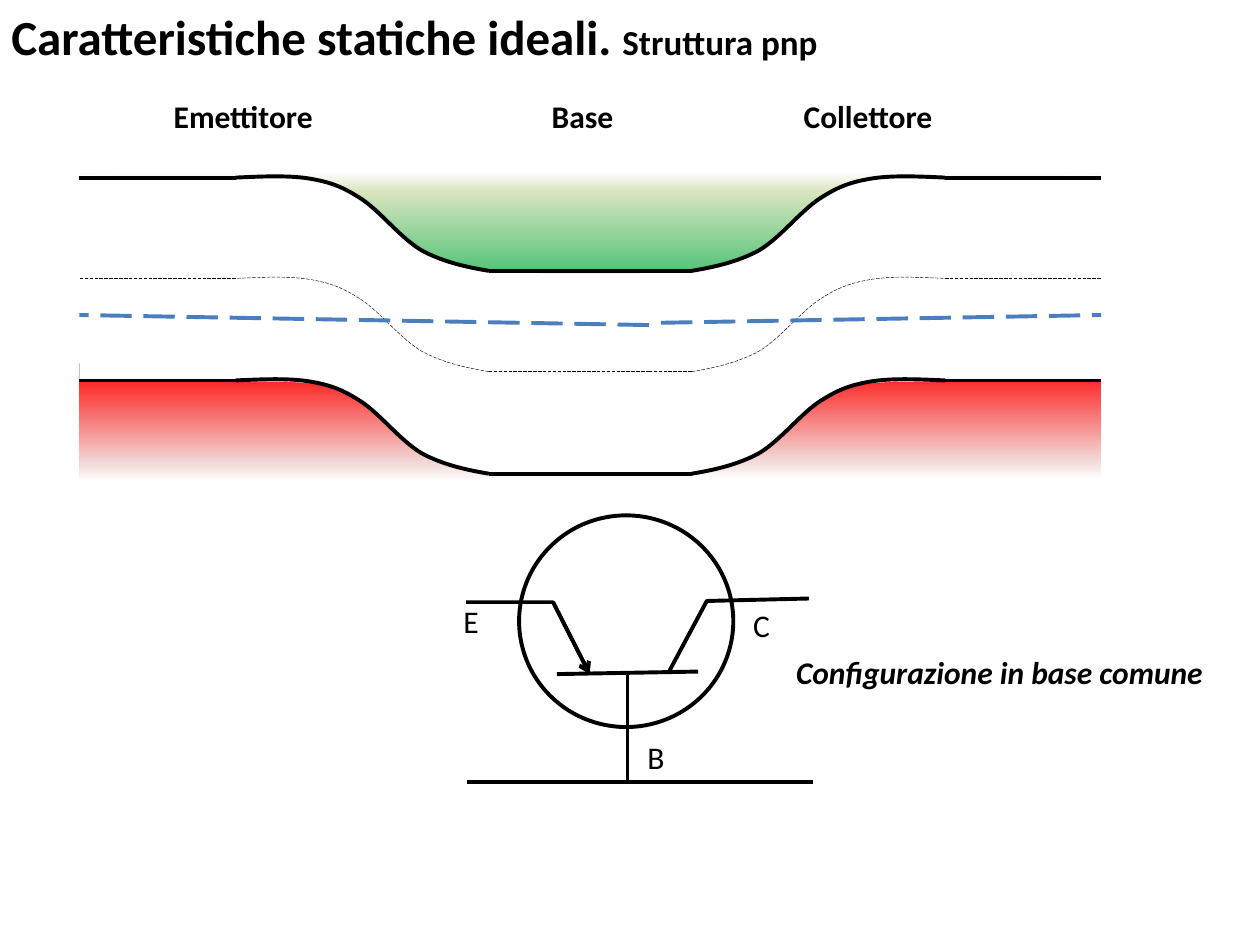
from dataclasses import dataclass

from lxml import etree
from pptx import Presentation
from pptx.dml.color import RGBColor
from pptx.enum import dml, shapes, text
from pptx.oxml import ns, parse_xml
from pptx.util import Inches, Pt


@dataclass(frozen=True)
class Theme:
    font: str = "Calibri"
    ink: str = "000000"
    paper: str = "FFFFFF"
    fermi: str = "4B7EBC"
    electrons: tuple = ("00B050", "D7E4BD")
    holes: tuple = ("FF0000", "F2DCDB")
    title: int = 28
    subtitle: int = 20
    label: int = 18
    thick: float = 2.25
    hair: float = 0.25


T = Theme()
DASH = dml.MSO_LINE.LONG_DASH


def draw(shps, pts, color=T.ink, width=T.thick, dash=None, fill=None):
    """Two points make a connector, more make a freeform; fill closes it."""
    pts = [(Inches(x), Inches(y)) for x, y in pts]
    if len(pts) == 2:
        sp = shps.add_connector(shapes.MSO_CONNECTOR.STRAIGHT, *pts[0], *pts[1])
        etree.SubElement(sp._element.spPr, ns.qn("a:effectLst"))
    else:
        fb = shps.build_freeform(*pts[0])
        fb.add_line_segments(pts[1:], close=fill is not None)
        sp = fb.convert_to_shape()
        sp.shadow.inherit = False
        if fill:
            sp.fill.solid()
            sp.fill.fore_color.rgb = RGBColor.from_string(fill)
            sp.line.fill.background()
            return sp
        sp.fill.background()
    sp.line.color.rgb = RGBColor.from_string(color)
    sp.line.width = Pt(width)
    if dash:
        sp.line.dash_style = dash
    return sp


def style(r, size, bold=False, italic=False):
    r.font.name = T.font
    r.font.size = Pt(size)
    r.font.bold = bold
    r.font.italic = italic
    r.font.color.rgb = RGBColor.from_string(T.ink)


prs = Presentation()
prs.slide_width, prs.slide_height = Inches(10), Inches(7.5)
s = prs.slides.add_slide(prs.slide_layouts[5])

# Title
title = s.shapes.title
title.left, title.top, title.width, title.height = map(Inches, (-0.01, 0, 6.7, 0.57))
tf = title.text_frame
tf.word_wrap = False
tf.vertical_anchor = text.MSO_ANCHOR.TOP
p = tf.paragraphs[0]
p.alignment = text.PP_ALIGN.LEFT
for words, size in (("Caratteristiche statiche ideali. ", T.title), ("Struttura pnp", T.subtitle)):
    r = p.add_run()
    r.text = words
    style(r, size, bold=True)

# Carrier clouds: electrons above the conduction band, holes below the valence band
for box, colors, rotation in (
    ((5.39, 0.5, 3.34, 2.05), T.electrons, 0),
    ((0.64, 0.5, 4.76, 2.05), T.electrons, 0),
    ((5.49, 2.86, 3.25, 1.62), T.holes, 180),
    ((0.63, 2.88, 4.86, 1.62), T.holes, 180),
):
    sp = s.shapes.add_shape(shapes.MSO_SHAPE.RECTANGLE, *map(Inches, box))
    sp.rotation = rotation
    sp.shadow.inherit = False
    sp.line.fill.background()
    stops = zip((0, 50, 58, 100), (*colors, T.paper, T.paper))
    gs = "".join(f'<a:gs pos="{pos * 1000}"><a:srgbClr val="{c}"/></a:gs>' for pos, c in stops)
    sp._element.spPr.find(ns.qn("a:prstGeom")).addnext(parse_xml(
        f'<a:gradFill {ns.nsdecls("a")} rotWithShape="1"><a:gsLst>{gs}</a:gsLst>'
        '<a:lin ang="16200000" scaled="0"/></a:gradFill>'))

# Band edge at the collector junction: start point, then Bezier triples
edge = [(5.49, 2.15), (5.67, 2.12), (5.85, 2.08), (6.02, 1.99), (6.19, 1.89),
        (6.35, 1.68), (6.5, 1.58), (6.64, 1.49), (6.73, 1.45), (6.9, 1.42),
        (7.07, 1.39), (7.28, 1.4), (7.5, 1.41)]

# White gap between the conduction and valence bands
gap = [(4.22, 3.76), (5.5, 3.76), (5.97, 3.64), (6.49, 3.2), (6.77, 3.05), (7.09, 3.03),
       (8.74, 3.02), (8.74, 1.39), (6.91, 1.41), (6.7, 1.47), (6.47, 1.59), (6.33, 1.71),
       (6.01, 2), (5.81, 2.09), (5.49, 2.15), (5.06, 2.17), (4.58, 2.17), (4.22, 2.17)]

# Collector half, then its mirror image for the emitter
MIRROR = 9.37
for side in (1, -1):
    def place(pts, dy=0):
        return [(x if side > 0 else MIRROR - x, y + dy) for x, y in pts]

    draw(s.shapes, place(gap), fill=T.paper)
    for dy, width, dash in ((0, T.thick, None), (0.8, T.hair, DASH), (1.61, T.thick, None)):
        band = s.shapes.add_group_shape().shapes
        curve = draw(band, place(edge, dy), width=width, dash=dash)
        # Turn every three line segments into one cubic curve
        segments = list(curve._element.iter(ns.qn("a:lnTo")))
        for i in range(0, len(segments), 3):
            bezier = etree.Element(ns.qn("a:cubicBezTo"))
            segments[i].addprevious(bezier)
            for segment in segments[i:i + 3]:
                bezier.append(segment[0])
                segment.getparent().remove(segment)
        for pts in ([(7.5, 1.41), (8.74, 1.41)], [(5.49, 2.15), (4.21, 2.15)]):
            draw(band, place(pts, dy), width=width, dash=dash)
    # Fermi level
    draw(s.shapes, place([(4.22, 2.58), (8.74, 2.5)]), T.fermi, dash=DASH)

# Transistor symbol
symbol = s.shapes.add_group_shape().shapes
draw(symbol, [(5.31, 5.33), (5.61, 4.77), (6.42, 4.75)])  # collector lead
draw(symbol, [(4.42, 5.35), (5.54, 5.33)])  # base plate
draw(symbol, [(4.98, 5.33), (4.98, 6.21)])  # base lead
sp = symbol.add_shape(shapes.MSO_SHAPE.OVAL, *map(Inches, (4.12, 4.09, 1.7, 1.68)))
sp.shadow.inherit = False
sp.fill.background()
sp.line.color.rgb = RGBColor.from_string(T.ink)
sp.line.width = Pt(T.thick)
draw(symbol, [(4.68, 5.35), (4.39, 4.78), (3.7, 4.78)], width=2)  # emitter lead
arrow = draw(symbol, [(4.68, 5.35), (4.39, 4.78)])
etree.SubElement(arrow.line._get_or_add_ln(), ns.qn("a:headEnd"), type="arrow")
draw(s.shapes, [(3.71, 6.21), (6.45, 6.21)])  # common base rail

# Labels
for shps, words, box, bold, italic in (
    (s.shapes, "Emettitore", (1.28, 0.72, 1.32, 0.4), True, False),
    (s.shapes, "Collettore", (6.28, 0.72, 1.24, 0.4), True, False),
    (s.shapes, "Base", (4.28, 0.72, 0.69, 0.4), True, False),
    (symbol, "E", (3.58, 4.73, 0.32, 0.49), False, False),
    (symbol, "C", (5.88, 4.76, 0.34, 0.49), False, False),
    (symbol, "B", (5.04, 5.81, 0.34, 0.49), False, False),
    (s.shapes, "Configurazione in base comune", (6.22, 5.13, 3.46, 0.4), True, True),
):
    tf = shps.add_textbox(*map(Inches, box)).text_frame
    tf.word_wrap = False
    tf.text = words
    style(tf.paragraphs[0].runs[0], T.label, bold, italic)

prs.save("out.pptx")
